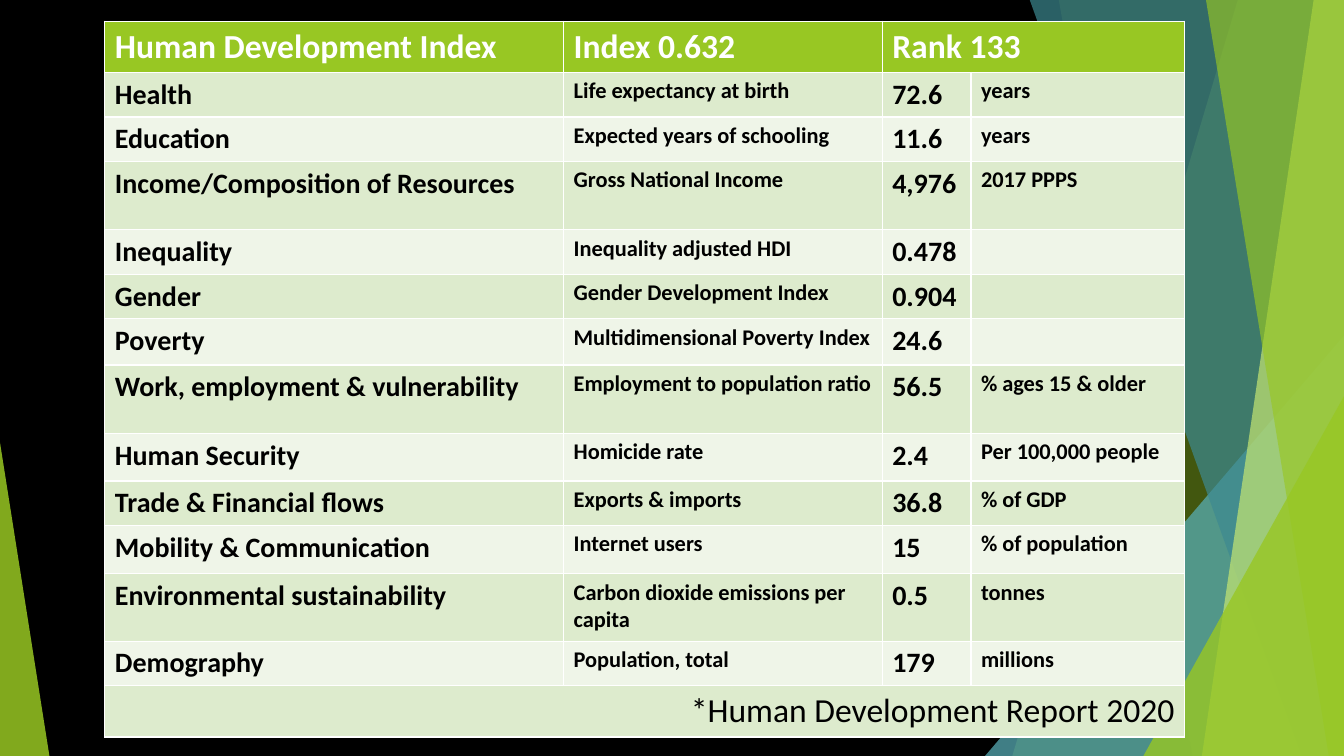
from lxml import etree
from pptx import Presentation
from pptx.dml.color import RGBColor
from pptx.enum.shapes import MSO_CONNECTOR, MSO_SHAPE
from pptx.enum.text import PP_ALIGN
from pptx.oxml.ns import qn
from pptx.util import Inches, Pt

WIDE, HIGH = 13.33, 7.5
GREEN, TEAL, AQUA, LIME = "98C723", "3D8991", "59B0B9", "C5E672"
BANDS = "DDEBCD", "EFF5E8"
COLS = 4.55, 3.16, 0.88, 2.12
ROWS = (0.51, 0.44, 0.44, 0.68, 0.44, 0.44, 0.46,
        0.68, 0.47, 0.44, 0.48, 0.67, 0.44, 0.51)
HEADS = "Human Development Index", "Index 0.632", "Rank 133"
FACTS = [
    ("Health", "Life expectancy at birth", "72.6", "years"),
    ("Education", "Expected years of schooling", "11.6", "years"),
    ("Income/Composition of Resources", "Gross National Income", "4,976", "2017 PPPS"),
    ("Inequality", "Inequality adjusted HDI", "0.478", ""),
    ("Gender", "Gender Development Index", "0.904", ""),
    ("Poverty", "Multidimensional Poverty Index", "24.6", ""),
    ("Work, employment & vulnerability", "Employment to population ratio", "56.5",
     "% ages 15 & older"),
    ("Human Security", "Homicide rate", "2.4", "Per 100,000 people"),
    ("Trade & Financial flows", "Exports & imports", "36.8", "% of GDP"),
    ("Mobility & Communication", "Internet users", "15", "% of population"),
    ("Environmental sustainability", "Carbon dioxide emissions per capita", "0.5", "tonnes"),
    ("Demography", "Population, total", "179", "millions"),
]
NOTE = "*Human Development Report 2020"


def paint(fill, tint, alpha=100):
    """Fill with a hex colour at the given opacity in percent."""
    fill.solid()
    fill.fore_color.rgb = RGBColor.from_string(tint)
    if alpha < 100:
        color = fill._xPr.find(qn("a:solidFill"))[0]
        etree.SubElement(color, qn("a:alpha"), val=str(alpha * 1000))


def finish(shape, tint, alpha):
    paint(shape.fill, tint, alpha)
    shape.line.fill.background()
    shape.shadow.inherit = False


def add_line(slide, *ends):
    line = slide.shapes.add_connector(MSO_CONNECTOR.STRAIGHT, *map(Inches, ends))
    paint(line.line.fill, "000000")
    line.line.width = Pt(0.75)
    etree.SubElement(line._element.spPr, qn("a:effectLst"))


def add_shard(slide, top, foot, tint, alpha):
    """Draw a pane from a slanted left side, top to foot, to the slide's right edge."""
    pen = slide.shapes.build_freeform(Inches(top), Inches(-0.01), scale=1.0)
    corners = (WIDE, -0.01), (WIDE, HIGH), (foot, HIGH)
    pen.add_line_segments([(Inches(x), Inches(y)) for x, y in corners], close=True)
    finish(pen.convert_to_shape(), tint, alpha)


def add_wedge(slide, left, top, width, peak, tint, alpha):
    """Draw a triangle that stands on the slide's foot, its peak at 0 (left) to 1 (right)."""
    box = map(Inches, (left, top, width, HIGH - top))
    wedge = slide.shapes.add_shape(MSO_SHAPE.ISOSCELES_TRIANGLE, *box)
    wedge.adjustments[0] = peak
    finish(wedge, tint, alpha)


def add_facets(slide):
    add_line(slide, 10.25, 0, 11.58, HIGH)
    add_line(slide, WIDE, 4.03, 8.12, HIGH)
    add_shard(slide, 12.28, 10.04, GREEN, 30)
    add_shard(slide, 10.5, 11.83, GREEN, 20)
    add_wedge(slide, 9.77, 3.33, 3.56, 1, AQUA, 72)
    add_shard(slide, 10.21, 12.91, TEAL, 70)
    add_shard(slide, 13.03, 11.92, LIME, 70)
    add_shard(slide, 11.96, 13.18, GREEN, 65)
    add_wedge(slide, 11.34, 3.93, 1.99, 1, GREEN, 80)
    add_wedge(slide, 0, 4.39, 0.49, 0, GREEN, 85)


def write(cell, text, size, tint="000000", bold=True):
    cell.text = text
    para = cell.text_frame.paragraphs[0]
    font = para.font
    font.name, font.size, font.bold = "Calibri", Pt(size), bold
    font.color.rgb = RGBColor.from_string(tint)
    return para


def add_table(slide, left, top):
    box = map(Inches, (left, top, sum(COLS), sum(ROWS)))
    table = slide.shapes.add_table(len(ROWS), len(COLS), *box).table
    for col, width in zip(table.columns, COLS):
        col.width = Inches(width)
    for i, (row, height) in enumerate(zip(table.rows, ROWS)):
        row.height = Inches(height)
        for cell in row.cells:
            paint(cell.fill, BANDS[(i - 1) % 2] if i else GREEN)

    last = len(ROWS) - 1
    table.cell(0, 2).merge(table.cell(0, 3))
    table.cell(last, 0).merge(table.cell(last, 3))
    for j, head in enumerate(HEADS):
        write(table.cell(0, j), head, 24, "FFFFFF")
    for i, fact in enumerate(FACTS, 1):
        for j, text in enumerate(fact):
            write(table.cell(i, j), text, 16 if j % 2 else 20)
    write(table.cell(last, 0), NOTE, 24, bold=False).alignment = PP_ALIGN.RIGHT


def main():
    deck = Presentation()
    deck.slide_width, deck.slide_height = Inches(WIDE), Inches(HIGH)
    slide = deck.slides.add_slide(deck.slide_layouts[6])
    paint(slide.background.fill, "000000")
    add_facets(slide)
    add_table(slide, 1.04, 0.21)
    deck.save("out.pptx")


if __name__ == "__main__":
    main()
